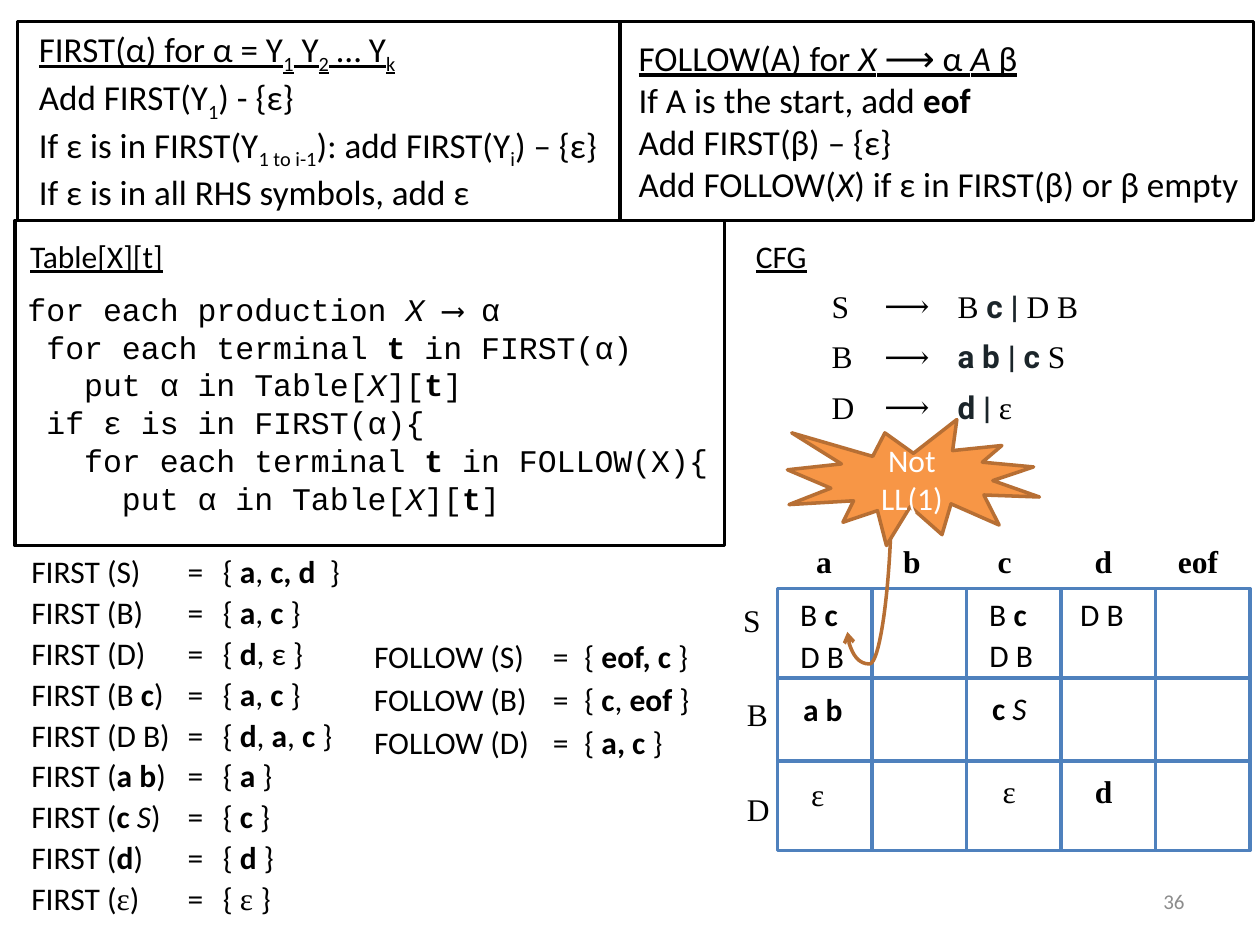
from lxml import etree
from pptx import Presentation
from pptx import util as u
from pptx.dml.color import RGBColor
from pptx.enum import shapes, text
from pptx.oxml.ns import qn

In = u.Inches
BLACK, WHITE, BLUE, ORANGE, BROWN = "000000", "FFFFFF", "4F81BD", "F79646", "B76F34"
SANS, SERIF, MONO = "Calibri", "Times New Roman", "Courier New"
MARKS = "*^_%@"

FIRST_SETS = [
    ("FIRST (S)", 1.08, "{ *a*, *c, d * }", 1.2),
    ("FIRST (B)", 1.1, "{ *a*, *c* }", 0.88),
    ("FIRST (D)", 1.12, "{ *d*, ε }", 0.9),
    ("FIRST (B *c*)", 1.26, "{ *a*, *c* }", 0.88),
    ("FIRST (D B)", 1.31, "{ *d*,* a*,* c* }", 1.14),
    ("FIRST (*a b*)", 1.28, "{ *a* }", 0.61),
    ("FIRST (*c *^S^)", 1.24, "{ *c* }", 0.58),
    ("FIRST (*d*)", 1.1, "{ *d* }", 0.61),
    ("FIRST (%ε%)", 1.08, "{ %ε %}", 0.79),
]
FOLLOW_SETS = [
    ("FOLLOW (S)", 1.41, "{ *eof, c* }", 1.09),
    ("FOLLOW (B)", 1.43, "{ *c*, *eof* }", 1.04),
    ("FOLLOW (D)", 1.45, "{ *a, c* }", 0.89),
]
FIRST_RULES = [
    "FIRST(α) for α = Y_1_ Y_2_ … Y_k_",
    "Add FIRST(Y_1_) - {ε}",
    "If ε is in FIRST(Y_1 to i-1_): add FIRST(Y_i_) – {ε}",
    "If ε is in all RHS symbols, add ε",
]
FOLLOW_RULES = [
    "FOLLOW(A) for ^X^ ⟶ α ^A^ β",
    "If A is the start, add *eof*",
    "Add FIRST(β) – {ε}",
    "Add FOLLOW(^X^) if ε in FIRST(β) or β empty",
]
TABLE_RULES = [
    "for each production ^X^ ⟶ α",
    " for each terminal *t* in FIRST(α)",
    "   put α in Table[^X^][*t*]",
    " if ε is in FIRST(α){",
    "   for each terminal *t* in FOLLOW(X){",
    "     put α in Table[^X^][*t*]",
]
PRODUCTIONS = [("S", "B @c | @D B"), ("B", "@a b | c @S"), ("D", "@d | @ε")]
COLUMN_HEADS = [("a", 6.38, 0.34), ("b", 7.07, 0.36), ("c", 7.82, 0.34),
                ("d", 8.59, 0.36), ("eof", 9.25, 0.58)]
ROW_HEADS = [("S", 5.8, 4.72), ("B", 5.83, 5.47), ("D", 5.83, 6.22)]
ENTRIES = [
    ("B *c*", 6.25, 4.67, 0.5, SANS), ("B *c*", 7.75, 4.67, 0.5, SANS),
    ("D B", 8.47, 4.67, 0.55, SANS), ("D B", 6.25, 5.01, 0.55, SANS),
    ("D B", 7.75, 5, 0.55, SANS), ("*a b*", 6.27, 5.43, 0.52, SANS),
    ("*c *^S^", 7.77, 5.42, 0.48, SANS), ("ε", 6.33, 6.1, 0.32, SERIF),
    ("ε", 7.85, 6.08, 0.32, SERIF), ("*d*", 8.58, 6.08, 0.36, SERIF),
]


def color(hex_value):
    return RGBColor.from_string(hex_value)


def add_run(paragraph, words, active):
    run = paragraph.add_run()
    run.text = words
    if "*" in active or "@" in active:
        run.font.bold = True
    if "^" in active:
        run.font.italic = True
    if "_" in active:
        run.font._element.set("baseline", "-25000")
    if "%" in active:
        run.font.name = SERIF
    if "@" in active:
        run.font.name = "Roboto"
        run.font.color.rgb = color("1B252A")


def write(paragraph, marked, font=SANS, size=18, ink=BLACK, underline=None, align=None):
    paragraph.font.name = font
    paragraph.font.size = u.Pt(size)
    paragraph.font.color.rgb = color(ink)
    paragraph.font.underline = underline
    paragraph.alignment = align
    active, words = set(), ""
    for letter in marked:
        if letter in MARKS:
            if words:
                add_run(paragraph, words, active)
            active ^= {letter}
            words = ""
        else:
            words += letter
    if words:
        add_run(paragraph, words, active)


def add_text(slide, lines, x, y, w, h=0.4, wrap=False, heading=False, **style):
    frame = slide.shapes.add_textbox(In(x), In(y), In(w), In(h)).text_frame
    frame.word_wrap = wrap
    for i, line in enumerate(lines):
        paragraph = frame.add_paragraph() if i else frame.paragraphs[0]
        write(paragraph, line, underline=True if heading and i == 0 else None, **style)
    return frame


def add_box(slide, x, y, w, h, line=BLACK, fill=WHITE, kind=shapes.MSO_SHAPE.RECTANGLE):
    box = slide.shapes.add_shape(kind, In(x), In(y), In(w), In(h))
    box.shadow.inherit = False
    box.fill.solid()
    box.fill.fore_color.rgb = color(fill)
    box.line.color.rgb = color(line)
    box.line.width = u.Pt(2)
    return box


def add_sets(slide, sets, top, pitch, name_x, equals_x, members_x):
    for i, (name, name_w, members, members_w) in enumerate(sets):
        y = top + i * pitch
        add_text(slide, [name], name_x, y, name_w)
        add_text(slide, ["="], equals_x, y, 0.33)
        add_text(slide, [members], members_x, y, members_w)


def add_grammar(slide):
    grammar = slide.shapes.add_table(3, 3, In(6.5), In(2.24), In(2.33), In(1.2)).table
    grammar.first_row = grammar.horz_banding = False
    for column, width in zip(grammar.columns, (0.42, 0.58, 1.33)):
        column.width = In(width)
    for r, (symbol, body) in enumerate(PRODUCTIONS):
        for c, (words, font) in enumerate([(symbol, SERIF), ("⟶", "Cambria"), (body, SERIF)]):
            cell = grammar.cell(r, c)
            cell.fill.background()
            cell.vertical_anchor = text.MSO_ANCHOR.MIDDLE
            write(cell.text_frame.paragraphs[0], words, font)


def add_parse_table(slide):
    for y in (4.67, 5.38, 6.04):
        for c in range(5):
            add_box(slide, 6.17 + 0.75 * c, y, 0.75, 0.71, BLUE)
    for symbol, x, y in ROW_HEADS:
        add_text(slide, [symbol], x, y, 0.37, font=SERIF)
    for terminal, x, w in COLUMN_HEADS:
        add_text(slide, [f"*{terminal}*"], x, 4.25, w, font=SERIF)
    for entry, x, y, w, font in ENTRIES:
        add_text(slide, [entry], x, y, w, font=font, align=text.PP_ALIGN.CENTER)


def add_conflict_arrow(slide):
    arrow = slide.shapes.add_connector(
        shapes.MSO_CONNECTOR.CURVE, In(6.35), In(4.29), In(7.45), In(4.64))
    arrow.line.color.rgb = color(BROWN)
    arrow.line.width = u.Pt(2)
    properties = arrow._element.spPr
    properties.find(qn("a:xfrm")).set("rot", "5400000")
    geometry = properties.find(qn("a:prstGeom"))
    bend = etree.SubElement(geometry.find(qn("a:avLst")), qn("a:gd"))
    bend.set("name", "adj1")
    bend.set("fmla", "val 123200")
    etree.SubElement(properties.find(qn("a:ln")), qn("a:tailEnd")).set("type", "arrow")
    etree.SubElement(properties, qn("a:effectLst"))


def add_verdict(slide):
    add_conflict_arrow(slide)
    burst = add_box(slide, 6.25, 3.33, 2, 1, BROWN, ORANGE, shapes.MSO_SHAPE.EXPLOSION1)
    burst.text_frame.word_wrap = True
    burst.text_frame.vertical_anchor = text.MSO_ANCHOR.MIDDLE
    write(burst.text_frame.paragraphs[0], "Not LL(1)", ink=WHITE, align=text.PP_ALIGN.CENTER)


def main():
    deck = Presentation()
    deck.slide_width, deck.slide_height = In(10), In(7.5)
    slide = deck.slides.add_slide(deck.slide_layouts[6])

    add_box(slide, 0.12, 1.75, 5.63, 2.58)
    add_box(slide, 4.92, 0.17, 5.03, 1.58)
    add_box(slide, 0.14, 0.17, 4.78, 1.58)
    add_text(slide, FIRST_RULES, 0.21, 0.17, 5.71, 1.45, wrap=True, heading=True, size=20)
    add_text(slide, FOLLOW_RULES, 4.97, 0.24, 5.73, 1.45, wrap=True, heading=True, size=20)
    add_text(slide, ["Table[X][t]"], 0.14, 1.83, 1.27, heading=True)
    add_text(slide, TABLE_RULES, 0.12, 2.25, 5.63, 1.92, font=MONO)

    add_text(slide, ["CFG"], 5.9, 1.83, 0.61, heading=True)
    add_grammar(slide)
    add_sets(slide, FIRST_SETS, 4.33, 0.325, 0.15, 1.39, 1.67)
    add_sets(slide, FOLLOW_SETS, 5.01, 0.34, 2.87, 4.29, 4.54)
    add_parse_table(slide)
    add_verdict(slide)

    number = add_text(slide, ["36"], 7.17, 6.95, 2.33, wrap=True, size=12,
                      ink="8C8C8C", align=text.PP_ALIGN.RIGHT)
    number.vertical_anchor = text.MSO_ANCHOR.MIDDLE
    deck.save("out.pptx")


if __name__ == "__main__":
    main()
